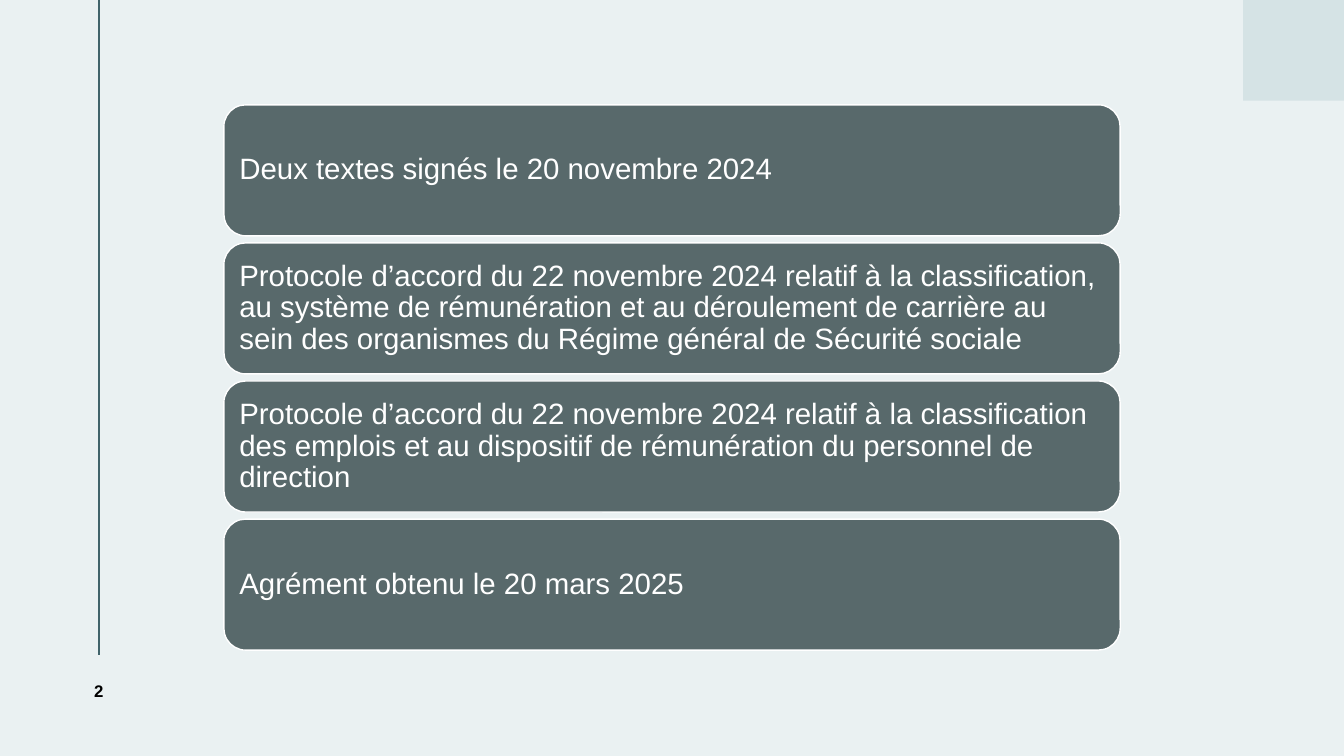
from pptx import Presentation
from pptx.dml.color import RGBColor
from pptx.enum.shapes import MSO_CONNECTOR as Line, MSO_SHAPE as Shape
from pptx.enum.text import MSO_ANCHOR as Anchor, PP_ALIGN as Align
from pptx.oxml.ns import qn
from pptx.util import Pt
from lxml.etree import SubElement

PX = 9144  # 100 px to the inch
COLORS = {
    "back": "EAF1F2",
    "rule": "40636A",
    "corner": "D5E3E5",
    "card": "58696B",
    "white": "FFFFFF",
    "black": "000000",
}
FACTS = [
    "Deux textes signés le 20 novembre 2024",
    "Protocole d’accord du 22 novembre 2024 relatif à la classification, "
    "au système de rémunération et au déroulement de carrière au sein des "
    "organismes du Régime général de Sécurité sociale",
    "Protocole d’accord du 22 novembre 2024 relatif à la classification des "
    "emplois et au dispositif de rémunération du personnel de direction",
    "Agrément obtenu le 20 mars 2025",
]


def px(*sizes):
    return [size * PX for size in sizes]


def color(name):
    return RGBColor.from_string(COLORS[name])


def paint(item, name):
    item.fill.solid()
    item.fill.fore_color.rgb = color(name)


def write(frame, text, size, tint, align):
    frame.word_wrap = True
    frame.vertical_anchor = Anchor.MIDDLE
    para = frame.paragraphs[0]
    para.text = text
    para.alignment = align
    font = para.runs[0].font
    font.name = "Arial"
    font.size = Pt(size)
    font.color.rgb = color(tint)
    return para


def add_decor(slide, wide):
    paint(slide.background, "back")
    rule = slide.shapes.add_connector(Line.STRAIGHT, *px(98, 0, 98, 650))
    rule.line.color.rgb = color("rule")
    rule.line.width = Pt(1.5)
    SubElement(rule._element.spPr, qn("a:effectLst"))
    corner = slide.shapes.add_shape(Shape.RECTANGLE, *px(wide - 100, 0, 100, 100))
    corner.shadow.inherit = False
    paint(corner, "corner")
    corner.line.fill.background()


def add_number(slide, text, box):
    frame = slide.shapes.add_textbox(*px(*box)).text_frame
    run = write(frame, text, 12, "black", Align.CENTER).runs[0]
    run.font.bold = True
    run._r.get_or_add_rPr().set("spc", "150")


def add_card(slide, text, box):
    card = slide.shapes.add_shape(Shape.ROUNDED_RECTANGLE, *px(*box))
    card.shadow.inherit = False
    paint(card, "card")
    card.line.color.rgb = color("white")
    card.line.width = Pt(1)
    frame = card.text_frame
    frame.margin_left = frame.margin_right = 9 * PX
    frame.margin_top = frame.margin_bottom = 9 * PX
    write(frame, text, 21, "white", Align.LEFT).line_spacing = 0.9


def add_stack(slide, facts, box, gap):
    """Fill the box with equal cards, one below the other."""
    left, top, wide, high = box
    tall = (high + gap) // len(facts) - gap
    for row, fact in enumerate(facts):
        add_card(slide, fact, (left, top + row * (tall + gap), wide, tall))


def main():
    deck = Presentation()
    deck.slide_width, deck.slide_height = px(1333, 750)
    slide = deck.slides.add_slide(deck.slide_layouts[6])
    add_decor(slide, 1333)
    add_number(slide, "2", (45, 650, 106, 71))
    add_stack(slide, FACTS, (222, 104, 889, 541), 7)
    deck.save("out.pptx")


if __name__ == "__main__":
    main()
